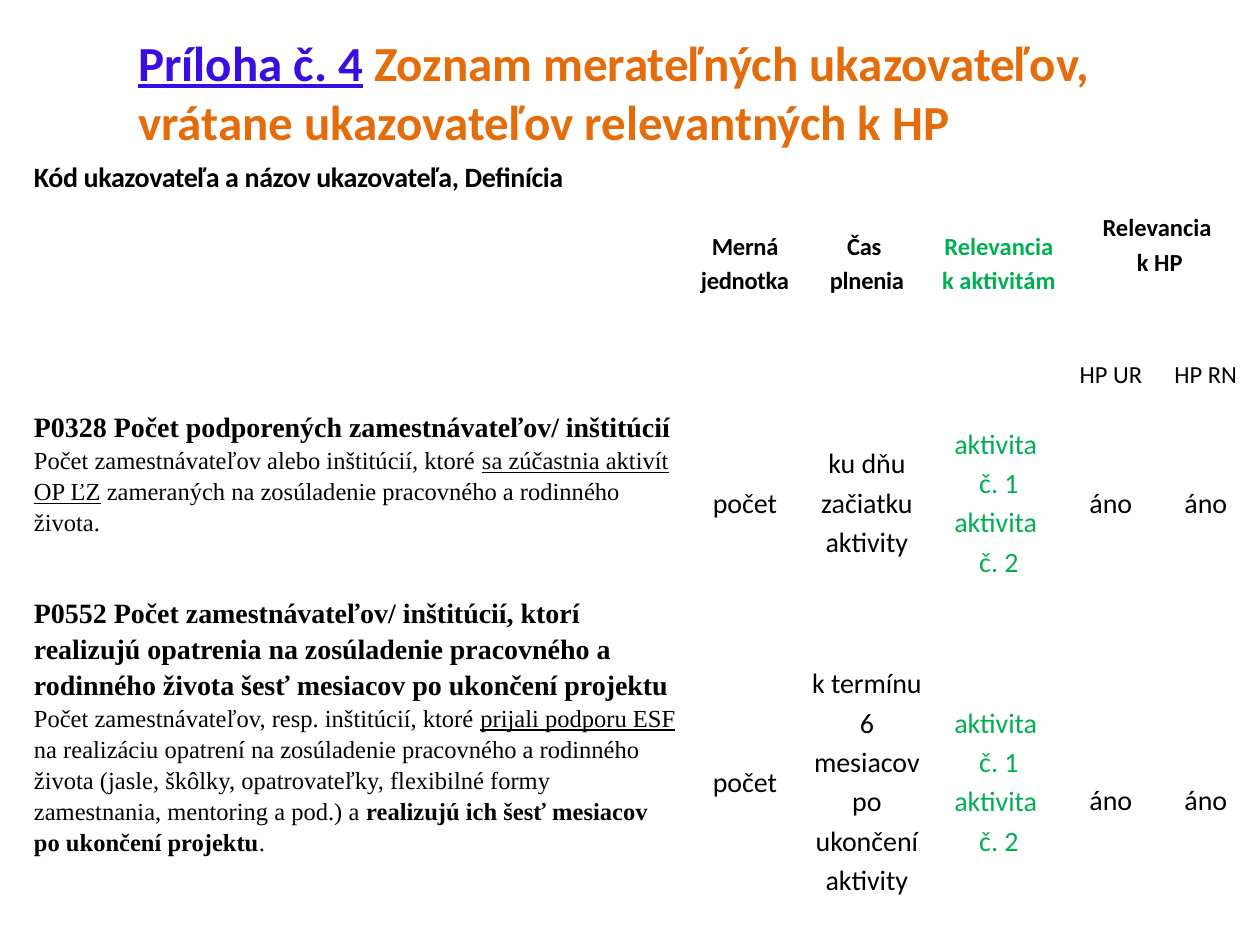
from lxml import etree
from pptx import Presentation
from pptx.dml.color import RGBColor
from pptx.enum.text import MSO_ANCHOR, PP_ALIGN
from pptx.oxml.ns import qn
from pptx.util import Pt

EMU_PER_PX = 914400 / 126
MIDDLE, TOP = MSO_ANCHOR.MIDDLE, MSO_ANCHOR.TOP
CENTER, LEFT = PP_ALIGN.CENTER, PP_ALIGN.LEFT
SANS, SERIF = "Calibri", "Times New Roman"
BLACK, WHITE, GREEN, BLUE, ORANGE = "000000", "FFFFFF", "00B050", "3A0DE1", "E46C0A"
COLS = [664, 112, 132, 132, 92, 98]
ROWS = [84, 137, 71, 186, 372, 29]
HEADER_ROWS = 3
ACTIVITIES = ["aktivita ", "č. 1", "aktivita ", "č. 2"]
INDICATORS = [
    ("P0328 Počet podporených zamestnávateľov/ inštitúcií",
     [("Počet zamestnávateľov alebo inštitúcií, ktoré ", ""),
      ("sa zúčastnia aktivít OP ĽZ", "u"),
      (" zameraných na zosúladenie pracovného a rodinného života.", "")],
     "ku dňu začiatku aktivity", 0),
    ("P0552 Počet zamestnávateľov/ inštitúcií, ktorí realizujú opatrenia na zosúladenie "
     "pracovného a rodinného života šesť mesiacov po ukončení projektu",
     [("Počet zamestnávateľov, resp. inštitúcií, ktoré ", ""),
      ("prijali podporu ESF", "u"),
      (" na realizáciu opatrení na zosúladenie pracovného a rodinného života (jasle, škôlky, "
       "opatrovateľky, flexibilné formy zamestnania, mentoring a pod.) a ", ""),
      ("realizujú ich šesť mesiacov po ukončení projektu", "b"),
      (".", "")],
     "k termínu 6 mesiacov po ukončení aktivity", 36),
]


def px(n):
    """Turn pixels into EMU."""
    return round(n * EMU_PER_PX)


def rgb(value):
    """Turn a hex string into a colour."""
    return RGBColor.from_string(value)


def style(font, size, name=SANS, color=BLACK, bold=False):
    """Set the look of a font."""
    font.size, font.name, font.bold = Pt(size), name, bold
    font.color.rgb = rgb(color)


def add_paragraph(tf, first):
    """Return the first paragraph of a frame or a new one."""
    return tf.paragraphs[0] if first else tf.add_paragraph()


def set_borders(cell, bottom):
    """Draw white cell borders with the given bottom width."""
    tcPr = cell._tc.get_or_add_tcPr()
    for i, (side, width) in enumerate([("L", 1), ("R", 1), ("T", 1), ("B", bottom)]):
        ln = etree.Element(qn(f"a:ln{side}"), w=str(Pt(width)))
        fill = etree.SubElement(ln, qn("a:solidFill"))
        etree.SubElement(fill, qn("a:srgbClr"), val=WHITE)
        tcPr.insert(i, ln)


def prepare_cell(cell, anchor=MIDDLE, top=0):
    """Set the margins and anchor of a cell and return its frame."""
    cell.margin_left = cell.margin_right = px(9)
    cell.margin_top, cell.margin_bottom = px(top), 0
    cell.vertical_anchor = anchor
    return cell.text_frame


def fill_cell(cell, lines, size=16, color=BLACK, bold=False, align=CENTER, top=0, spacing=0):
    """Write evenly styled lines into a cell."""
    tf = prepare_cell(cell, top=top)
    for i, line in enumerate(lines):
        p = add_paragraph(tf, i == 0)
        p.alignment, p.line_spacing = align, 1.15
        style(p.font, size, color=color, bold=bold)
        r = p.add_run()
        r.text = line
        if spacing:
            r._r.get_or_add_rPr().set("spc", str(spacing))


def fill_indicator(cell, title, definition):
    """Write an indicator title and its definition."""
    tf = prepare_cell(cell, TOP)
    for i, (size, runs) in enumerate([(16, [(title, "b")]), (14, definition)]):
        p = add_paragraph(tf, i == 0)
        p.alignment, p.line_spacing = LEFT, 1.15
        for text, mark in runs:
            r = p.add_run()
            r.text = text
            style(r.font, size, SERIF, bold=mark == "b")
            r.font.underline = mark == "u"


def add_header(table):
    """Merge and fill the header rows."""
    table.cell(1, 0).merge(table.cell(2, 0))
    for col in (1, 2, 3):
        table.cell(0, col).merge(table.cell(2, col))
    table.cell(0, 4).merge(table.cell(1, 5))
    fill_cell(table.cell(0, 0), ["Kód ukazovateľa a názov ukazovateľa, Definícia"],
              bold=True, align=LEFT, top=34, spacing=-20)
    fill_cell(table.cell(0, 1), ["Merná jednotka"], 14, bold=True, spacing=-20)
    fill_cell(table.cell(0, 2), ["Čas ", "plnenia"], 14, bold=True, spacing=-20)
    fill_cell(table.cell(0, 3), ["Relevancia ", "k aktivitám "], 14, GREEN, True)
    fill_cell(table.cell(0, 4), ["Relevancia ", "k HP"], 14, bold=True, top=34)
    for col, text in ((4, "HP UR"), (5, "HP RN")):
        fill_cell(table.cell(2, col), [text], 14)


def add_table(slide):
    """Add the table of indicators."""
    frame = slide.shapes.add_table(len(ROWS), len(COLS), px(25), px(116), px(sum(COLS)), px(sum(ROWS)))
    table = frame.table
    table.first_row = table.horz_banding = False
    for col, width in zip(table.columns, COLS):
        col.width = px(width)
    for i, (row, height) in enumerate(zip(table.rows, ROWS)):
        row.height = px(height)
        for cell in row.cells:
            cell.fill.background()
            set_borders(cell, 3 if i == 0 else 1)
    add_header(table)
    for i, (title, definition, time, top) in enumerate(INDICATORS, HEADER_ROWS):
        fill_indicator(table.cell(i, 0), title, definition)
        fill_cell(table.cell(i, 1), ["počet"])
        fill_cell(table.cell(i, 2), [time])
        fill_cell(table.cell(i, 3), ACTIVITIES, color=GREEN)
        for col in (4, 5):
            fill_cell(table.cell(i, col), ["áno"], top=top)


def add_title(slide):
    """Add the two-line title."""
    tf = slide.shapes.add_textbox(px(126), px(26), px(1075), px(131)).text_frame
    tf.word_wrap = True
    lines = [[("Príloha č. 4", BLUE), (" ", BLUE), ("Zoznam merateľných ukazovateľov,", ORANGE)],
             [("vrátane ukazovateľov relevantných k HP", ORANGE)]]
    for i, runs in enumerate(lines):
        p = add_paragraph(tf, i == 0)
        for text, color in runs:
            r = p.add_run()
            r.text = text
            style(r.font, 28, color=color, bold=True)
    tf.paragraphs[0].runs[0].font.underline = True


def main():
    """Build the slide."""
    prs = Presentation()
    prs.slide_width, prs.slide_height = px(1260), px(945)
    slide = prs.slides.add_slide(prs.slide_layouts[6])
    add_table(slide)
    add_title(slide)
    prs.save("out.pptx")


if __name__ == "__main__":
    main()
